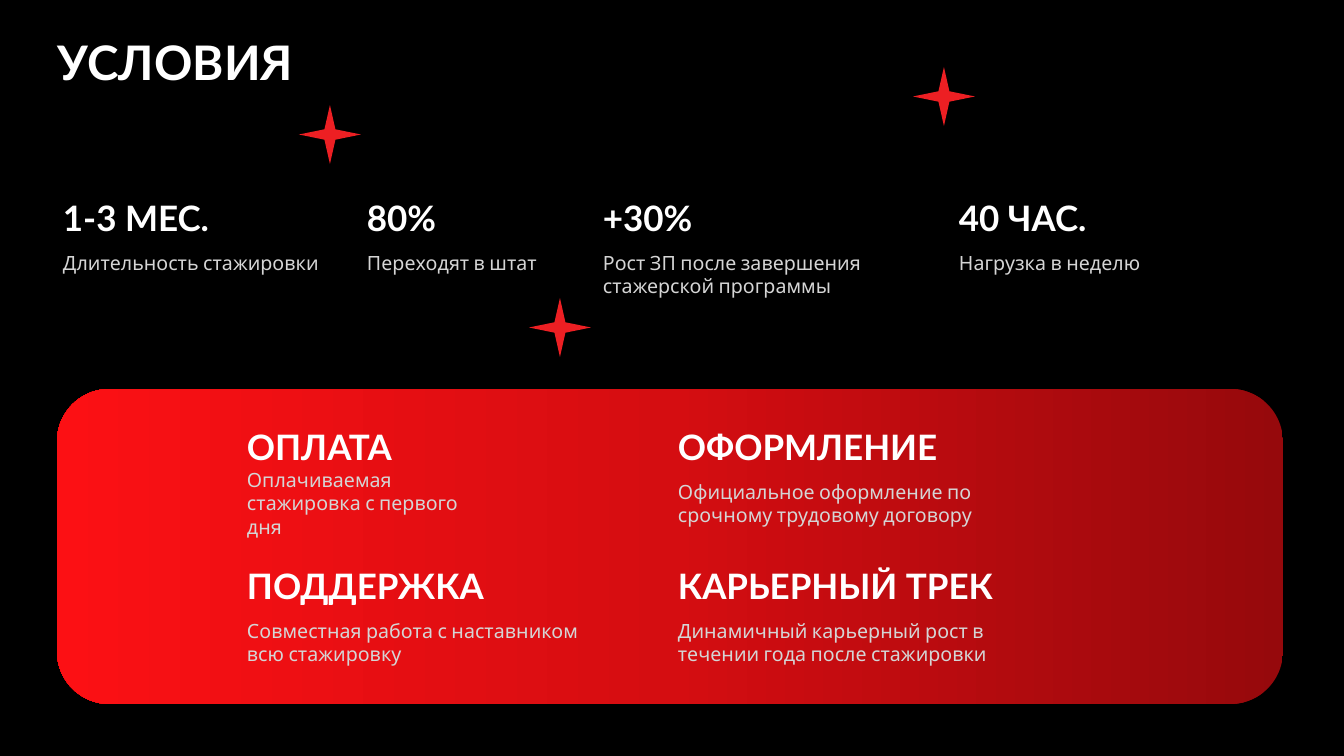
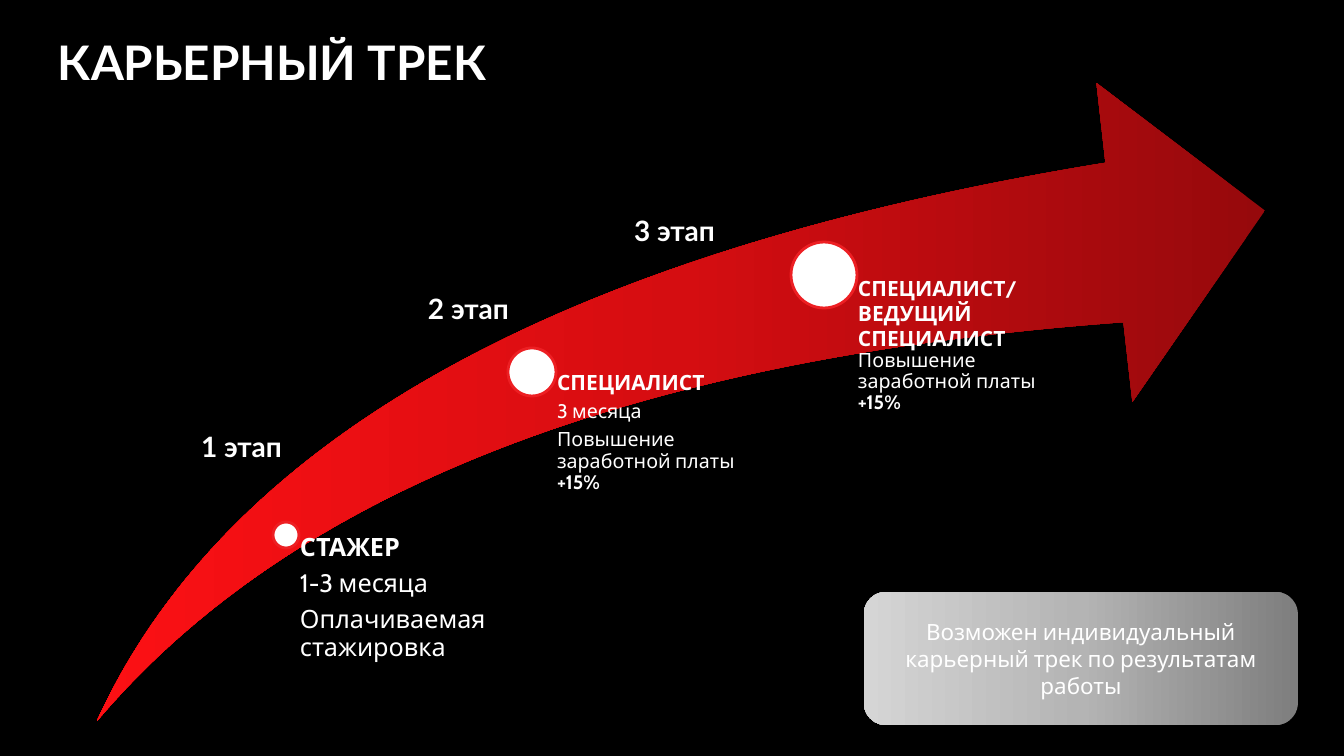
"""Build two dark slides on internship conditions and the career track."""
import copy
from dataclasses import dataclass

import pptx
import pptx.dml.color
import pptx.enum.shapes
import pptx.enum.text
import pptx.oxml.ns
import pptx.util

SHAPE = pptx.enum.shapes.MSO_SHAPE
ALIGN = pptx.enum.text.PP_ALIGN
ANCHOR = pptx.enum.text.MSO_ANCHOR
AUTO_SIZE = pptx.enum.text.MSO_AUTO_SIZE
EMU_PER_PX = 914400 / 100.8


@dataclass(frozen=True)
class Theme:
    background: str = "000000"
    white: str = "FFFFFF"
    muted: str = "D5D5D5"
    accent: str = "ED1F23"
    red_fade: tuple[str, ...] = ("96090C", "D50D11", "FC1014")
    gray_fade: tuple[str, ...] = ("7E7E7E", "B4B4B4", "D5D5D5")
    heading_font: str = "Lato"
    body_font: str = "Cabin"
    title_size: int = 34
    heading_size: int = 25
    label_size: int = 20
    lead_size: int = 18
    note_size: int = 16
    role_size: int = 15
    body_size: int = 14


THEME = Theme()


@dataclass(frozen=True)
class Box:
    left: int
    top: int
    width: int
    height: int


@dataclass(frozen=True)
class Fact:
    left: int
    top: int
    width: int
    detail_height: int
    heading: str
    detail: str


@dataclass(frozen=True)
class Line:
    text: str
    size: int
    bold: bool = False
    tight: bool = True
    bold_end: str = ""


@dataclass(frozen=True)
class Stage:
    label: str
    label_left: int
    label_top: int
    center_x: int
    center_y: int
    radius: int
    text_width: int
    lines: tuple[Line, ...]


RAISE = Line("Повышение заработной платы ", THEME.body_size, bold_end="+15%")

FACTS = (
    Fact(57, 191, 303, 35, "1-3 МЕС.", "Длительность стажировки"),
    Fact(361, 191, 235, 35, "80%", "Переходят в штат"),
    Fact(597, 191, 354, 58, "+30%", "Рост ЗП после завершения стажерской программы"),
    Fact(953, 191, 330, 35, "40 ЧАС.", "Нагрузка в неделю"),
    Fact(241, 420, 259, 58, "ОПЛАТА", "Оплачиваемая стажировка с первого дня"),
    Fact(672, 420, 350, 58, "ОФОРМЛЕНИЕ", "Официальное оформление по срочному трудовому договору"),
    Fact(241, 559, 350, 58, "ПОДДЕРЖКА", "Совместная работа с наставником всю стажировку"),
    Fact(672, 559, 350, 58, "КАРЬЕРНЫЙ ТРЕК", "Динамичный карьерный рост в течении года после стажировки"),
)

STARS = ((299, 105), (913, 67), (529, 298))

STAGES = (
    Stage("1 этап", 201, 433, 286, 535, 13, 239, (
        Line("СТАЖЕР", THEME.lead_size, bold=True),
        Line("1-3 месяца", THEME.lead_size),
        Line("Оплачиваемая стажировка", THEME.lead_size),
    )),
    Stage("2 этап", 428, 295, 532, 372, 24, 246, (
        Line("СПЕЦИАЛИСТ", THEME.role_size, bold=True),
        Line("3 месяца", THEME.body_size),
        RAISE,
    )),
    Stage("3 этап", 634, 217, 824, 275, 33, 246, (
        Line("СПЕЦИАЛИСТ/", THEME.role_size, bold=True, tight=False),
        Line("ВЕДУЩИЙ СПЕЦИАЛИСТ", THEME.role_size, bold=True, tight=False),
        RAISE,
    )),
)


def px(length: int) -> pptx.util.Emu:
    """Turn pixels into EMU."""
    return pptx.util.Emu(round(length * EMU_PER_PX))


def rgb(color: str) -> pptx.dml.color.RGBColor:
    """Turn a hex string into a colour."""
    return pptx.dml.color.RGBColor.from_string(color)


def place(box: Box) -> tuple[pptx.util.Emu, ...]:
    """Give a box as EMU left, top, width and height."""
    return px(box.left), px(box.top), px(box.width), px(box.height)


def set_frame(frame, *, insets=(0, 0, 0, 0), anchor=ANCHOR.TOP, grow=False) -> None:
    """Set wrapping, insets, anchor and growth of a text frame."""
    frame.word_wrap = True
    frame.auto_size = AUTO_SIZE.SHAPE_TO_FIT_TEXT if grow else AUTO_SIZE.NONE
    frame.vertical_anchor = anchor
    (frame.margin_left, frame.margin_top,
     frame.margin_right, frame.margin_bottom) = map(px, insets)


def write(frame, text: str, *, size: int, font: str = THEME.body_font,
          color: str = THEME.white, bold: bool = False, align=ALIGN.LEFT,
          tight: bool = False, bold_end: str = ""):
    """Write a formatted paragraph, with an optional bold ending."""
    first = frame.paragraphs[0]
    para = frame.add_paragraph() if first.runs else first
    para.alignment = align
    if tight:
        para.line_spacing = 0.9
        para.space_after = pptx.util.Pt(round(size * 0.35, 1))
    for words, weight in ((text, bold), (bold_end, True)):
        if words:
            span = para.add_run()
            span.text = words
            span.font.size = pptx.util.Pt(size)
            span.font.name = font
            span.font.bold = weight
            span.font.color.rgb = rgb(color)
    return para


def add_text(page, box: Box, **frame_format):
    """Add a text box and return its frame."""
    frame = page.shapes.add_textbox(*place(box)).text_frame
    set_frame(frame, **frame_format)
    return frame


def add_shape(page, kind, box: Box, *, fill: str = "", fade: tuple[str, ...] = (),
              line: str = ""):
    """Add a shape with a flat or three-colour fill."""
    shape = page.shapes.add_shape(kind, *place(box))
    shape.shadow.inherit = False
    if fade:
        shape.fill.gradient()
        shape.fill.gradient_angle = 180
        stops = shape._element.spPr.find(".//" + pptx.oxml.ns.qn("a:gsLst"))
        stops.append(copy.deepcopy(stops[-1]))
        for index, (stop, color) in enumerate(zip(shape.fill.gradient_stops, fade)):
            stop.position = index / (len(fade) - 1)
            stop.color.rgb = rgb(color)
    else:
        shape.fill.solid()
        shape.fill.fore_color.rgb = rgb(fill)
    if line:
        shape.line.color.rgb = rgb(line)
        shape.line.width = pptx.util.Pt(2)
    else:
        shape.line.fill.background()
    return shape


def add_page(deck, title: str):
    """Add a titled page."""
    page = deck.slides.add_slide(deck.slide_layouts[5])
    holder = page.shapes.title
    holder.left, holder.top, holder.width, holder.height = place(Box(57, 32, 1229, 59))
    set_frame(holder.text_frame, insets=(1, 1, 0, 0), grow=True)
    para = write(holder.text_frame, title, size=THEME.title_size,
                 font=THEME.heading_font, bold=True)
    para.space_before = pptx.util.Pt(1)
    return page


def add_fact(page, fact: Fact) -> None:
    """Add a heading with its detail below."""
    padding = {"insets": (6, 6, 6, 6), "anchor": ANCHOR.MIDDLE, "grow": True}
    heading = add_text(page, Box(fact.left, fact.top, fact.width, 53), **padding)
    write(heading, fact.heading, size=THEME.heading_size,
          font=THEME.heading_font, bold=True)
    detail = add_text(page, Box(fact.left, fact.top + 54, fact.width, fact.detail_height),
                      **padding)
    write(detail, fact.detail, size=THEME.body_size, color=THEME.muted)


def add_stage(page, stage: Stage) -> None:
    """Add a stage dot, its label and its description."""
    diameter = 2 * stage.radius
    add_shape(page, SHAPE.OVAL,
              Box(stage.center_x - stage.radius, stage.center_y - stage.radius,
                  diameter, diameter),
              fill=THEME.white, line=THEME.accent)
    description = add_text(
        page, Box(stage.center_x, stage.center_y, stage.text_width, 720 - stage.center_y),
        insets=(stage.radius + 1, 0, 0, 0))
    for line in stage.lines:
        write(description, line.text, size=line.size, bold=line.bold,
              tight=line.tight, bold_end=line.bold_end)
    label = add_text(page, Box(stage.label_left, stage.label_top, 121, 64))
    write(label, stage.label, size=THEME.label_size, font=THEME.heading_font,
          bold=True, tight=True)


def build_conditions(deck) -> None:
    """Build the conditions page."""
    page = add_page(deck, "УСЛОВИЯ")
    add_shape(page, SHAPE.ROUNDED_RECTANGLE, Box(57, 389, 1226, 315), fade=THEME.red_fade)
    for fact in FACTS:
        add_fact(page, fact)
    for left, top in STARS:
        add_shape(page, SHAPE.STAR_4_POINT, Box(left, top, 62, 59), fill=THEME.accent)


def build_career(deck) -> None:
    """Build the career track page."""
    page = add_page(deck, "КАРЬЕРНЫЙ ТРЕК")
    arrow = add_shape(page, SHAPE.SWOOSH_ARROW, Box(97, 83, 1168, 638), fade=THEME.red_fade)
    arrow.adjustments[0] = 0.25
    arrow.adjustments[1] = 0.25
    for stage in STAGES:
        add_stage(page, stage)
    note = add_shape(page, SHAPE.ROUNDED_RECTANGLE, Box(864, 592, 434, 133),
                     fade=THEME.gray_fade)
    set_frame(note.text_frame, anchor=ANCHOR.MIDDLE)
    write(note.text_frame, "Возможен индивидуальный карьерный трек по результатам работы",
          size=THEME.note_size, align=ALIGN.CENTER)


def main() -> None:
    """Build and save the deck."""
    deck = pptx.Presentation()
    deck.slide_width, deck.slide_height = px(1344), px(756)
    backdrop = deck.slide_master.background.fill
    backdrop.solid()
    backdrop.fore_color.rgb = rgb(THEME.background)
    build_conditions(deck)
    build_career(deck)
    deck.save("out.pptx")


if __name__ == "__main__":
    main()
